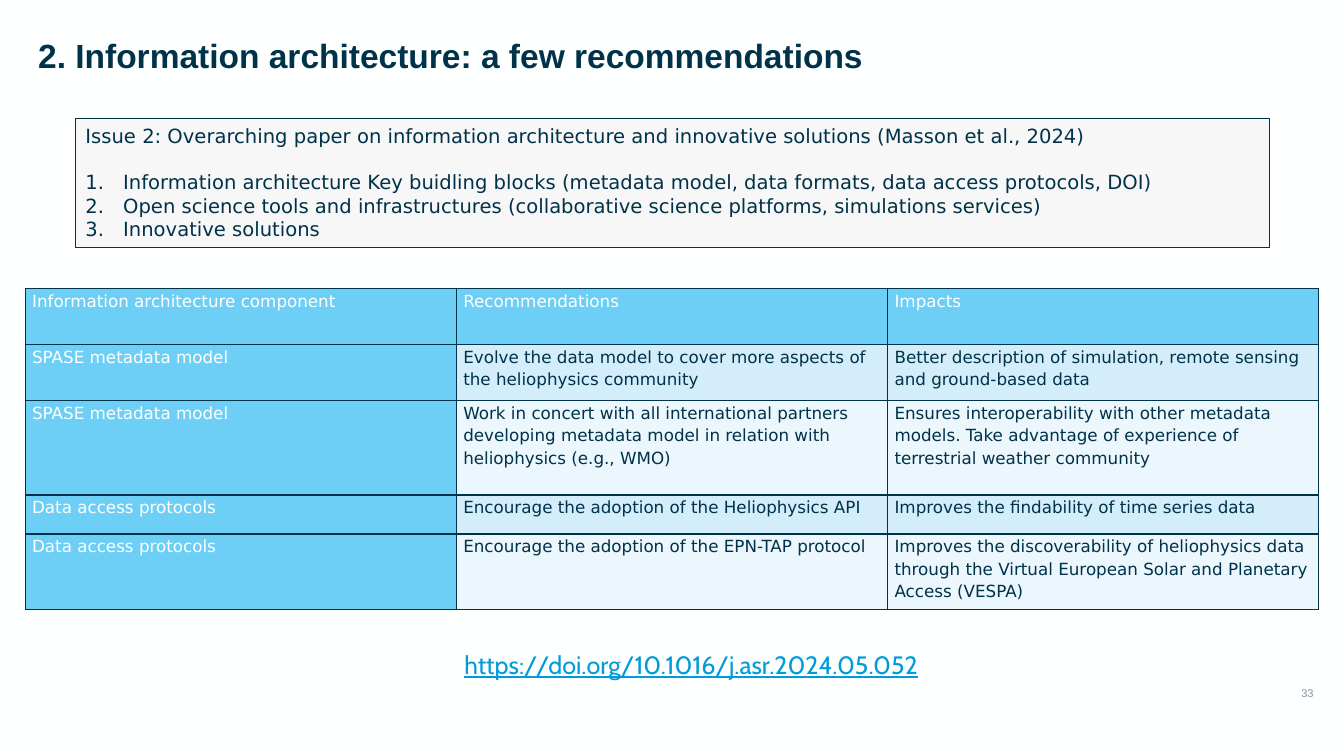
from dataclasses import dataclass

from lxml.etree import SubElement
from pptx import Presentation
from pptx.dml.color import RGBColor
from pptx.enum.text import MSO_ANCHOR as Anchor, MSO_AUTO_SIZE as AutoSize, PP_ALIGN as Align
from pptx.oxml import parse_xml
from pptx.oxml.ns import nsdecls, qn
from pptx.util import Pt

# Content
TITLE = "2. Information architecture: a few recommendations"
ISSUE = ("Issue 2: Overarching paper on information architecture and innovative "
         "solutions (Masson et al., 2024)")
TOPICS = [
    "Information architecture Key buidling blocks (metadata model, data formats, "
    "data access protocols, DOI)",
    "Open science tools and infrastructures (collaborative science platforms, simulations services)",
    "Innovative solutions",
]
ADVICE = [
    ("Information architecture component", "Recommendations", "Impacts"),
    ("SPASE metadata model",
     "Evolve the data model to cover more aspects of the heliophysics community",
     "Better description of simulation, remote sensing and ground-based data"),
    ("SPASE metadata model",
     "Work in concert with all international partners developing metadata model "
     "in relation with heliophysics (e.g., WMO)",
     "Ensures interoperability with other metadata models. Take advantage of "
     "experience of terrestrial weather community"),
    ("Data access protocols",
     "Encourage the adoption of the Heliophysics API",
     "Improves the findability of time series data"),
    ("Data access protocols",
     "Encourage the adoption of the EPN-TAP protocol",
     "Improves the discoverability of heliophysics data through the Virtual "
     "European Solar and Planetary Access (VESPA)"),
]
DOI = "https://doi.org/10.1016/j.asr.2024.05.052"
PAGE_NUMBER = "33"


@dataclass(frozen=True)
class Theme:
    navy: str = "003249"
    white: str = "FEFFFF"
    panel: str = "F7F7F7"
    header: str = "6DCFF6"
    bands: tuple = ("D4EDFB", "EBF6FD")
    link: str = "009BDA"
    muted: str = "8197A6"
    heading_font: str = "Arial"
    body_font: str = "DejaVu Sans"
    link_font: str = "Cabin"
    title_size: float = 24
    issue_size: float = 14
    table_size: float = 12
    link_size: float = 18
    number_size: float = 8


theme = Theme()

# Layout in points: left, top, width, height
PAGE_SIZE = (962.64, 540)
TITLE_AREA = (20.16, 21.6, 816.5, 36)
ISSUE_AREA = (54, 85, 855.4, 92.2)
TABLE_AREA = (18, 206.8, 926.6, 229.7)
DOI_AREA = (325.5, 461.5, 488.9, 28.8)
NUMBER_AREA = (645.8, 488.2, 295.2, 17.3)
ROW_HEIGHTS = (40, 40.3, 67.4, 28, 54)
ITEM_INDENT = 27
BLANK_LINE = 16.4


def color(code):
    return RGBColor.from_string(code)


def place(shape, area):
    shape.left, shape.top, shape.width, shape.height = map(Pt, area)


def add_run(para, text, font, size, code, bold=False, underline=False):
    span = para.add_run()
    span.text = text
    span.font.name, span.font.size = font, Pt(size)
    span.font.color.rgb = color(code)
    span.font.bold, span.font.underline = bold, underline


def set_frame(frame, anchor=Anchor.TOP):
    frame.word_wrap = True
    frame.auto_size = AutoSize.NONE
    frame.vertical_anchor = anchor


def add_text_line(page, area):
    box = page.shapes.add_textbox(*map(Pt, area))
    set_frame(box.text_frame)
    return box.text_frame


def set_bullet(para, numbered):
    properties = para._p.get_or_add_pPr()
    indent = Pt(ITEM_INDENT) if numbered else 0
    properties.set("marL", str(indent))
    properties.set("indent", str(-indent))
    if numbered:
        SubElement(properties, qn("a:buFont"), typeface="+mj-lt")
        SubElement(properties, qn("a:buAutoNum"), type="arabicPeriod")
    else:
        SubElement(properties, qn("a:buNone"))


def set_borders(cell):
    properties = cell._tc.get_or_add_tcPr()
    for position, side in enumerate(("lnL", "lnR", "lnT", "lnB")):
        properties.insert(position, parse_xml(
            f'<a:{side} {nsdecls("a")} w="{Pt(1)}"><a:solidFill>'
            f'<a:srgbClr val="{theme.navy}"/></a:solidFill></a:{side}>'))


def add_title(page):
    title = page.shapes.title
    place(title, TITLE_AREA)
    set_frame(title.text_frame, Anchor.MIDDLE)
    para = title.text_frame.paragraphs[0]
    para.alignment = Align.LEFT
    add_run(para, TITLE, theme.heading_font, theme.title_size, theme.navy, bold=True)


def add_issue(page):
    box = page.placeholders[1]
    place(box, ISSUE_AREA)
    box.fill.solid()
    box.fill.fore_color.rgb = color(theme.panel)
    box.line.color.rgb = color(theme.navy)
    box.line.width = Pt(0.75)
    frame = box.text_frame
    set_frame(frame)
    for index, text in enumerate([ISSUE, *TOPICS]):
        para = frame.add_paragraph() if index else frame.paragraphs[0]
        set_bullet(para, numbered=index > 0)
        para.space_before = Pt(BLANK_LINE if index == 1 else 0)
        add_run(para, text, theme.body_font, theme.issue_size, theme.navy)


def add_advice(page):
    table = page.shapes.add_table(len(ADVICE), len(ADVICE[0]), *map(Pt, TABLE_AREA)).table
    table.first_row = table.horz_banding = False
    for column in table.columns:
        column.width = Pt(TABLE_AREA[2] / len(ADVICE[0]))
    for r, (texts, height) in enumerate(zip(ADVICE, ROW_HEIGHTS)):
        table.rows[r].height = Pt(height)
        for c, text in enumerate(texts):
            cell = table.cell(r, c)
            is_header = r == 0 or c == 0
            cell.fill.solid()
            cell.fill.fore_color.rgb = color(theme.header if is_header else theme.bands[(r - 1) % 2])
            set_borders(cell)
            cell.margin_left = cell.margin_right = Pt(5)
            cell.margin_top = cell.margin_bottom = 0
            para = cell.text_frame.paragraphs[0]
            para.line_spacing = 1.15
            add_run(para, text, theme.body_font, theme.table_size,
                    theme.white if is_header else theme.navy)


def add_footer(page):
    frame = add_text_line(page, DOI_AREA)
    add_run(frame.paragraphs[0], DOI, theme.link_font, theme.link_size, theme.link, underline=True)
    frame = add_text_line(page, NUMBER_AREA)
    frame.margin_right = 0
    frame.paragraphs[0].alignment = Align.RIGHT
    add_run(frame.paragraphs[0], PAGE_NUMBER, theme.heading_font, theme.number_size, theme.muted)


def main():
    deck = Presentation()
    deck.slide_width, deck.slide_height = map(Pt, PAGE_SIZE)
    page = deck.slides.add_slide(deck.slide_layouts[1])
    page.background.fill.solid()
    page.background.fill.fore_color.rgb = color(theme.white)
    add_title(page)
    add_issue(page)
    add_advice(page)
    add_footer(page)
    deck.save("out.pptx")


if __name__ == "__main__":
    main()
